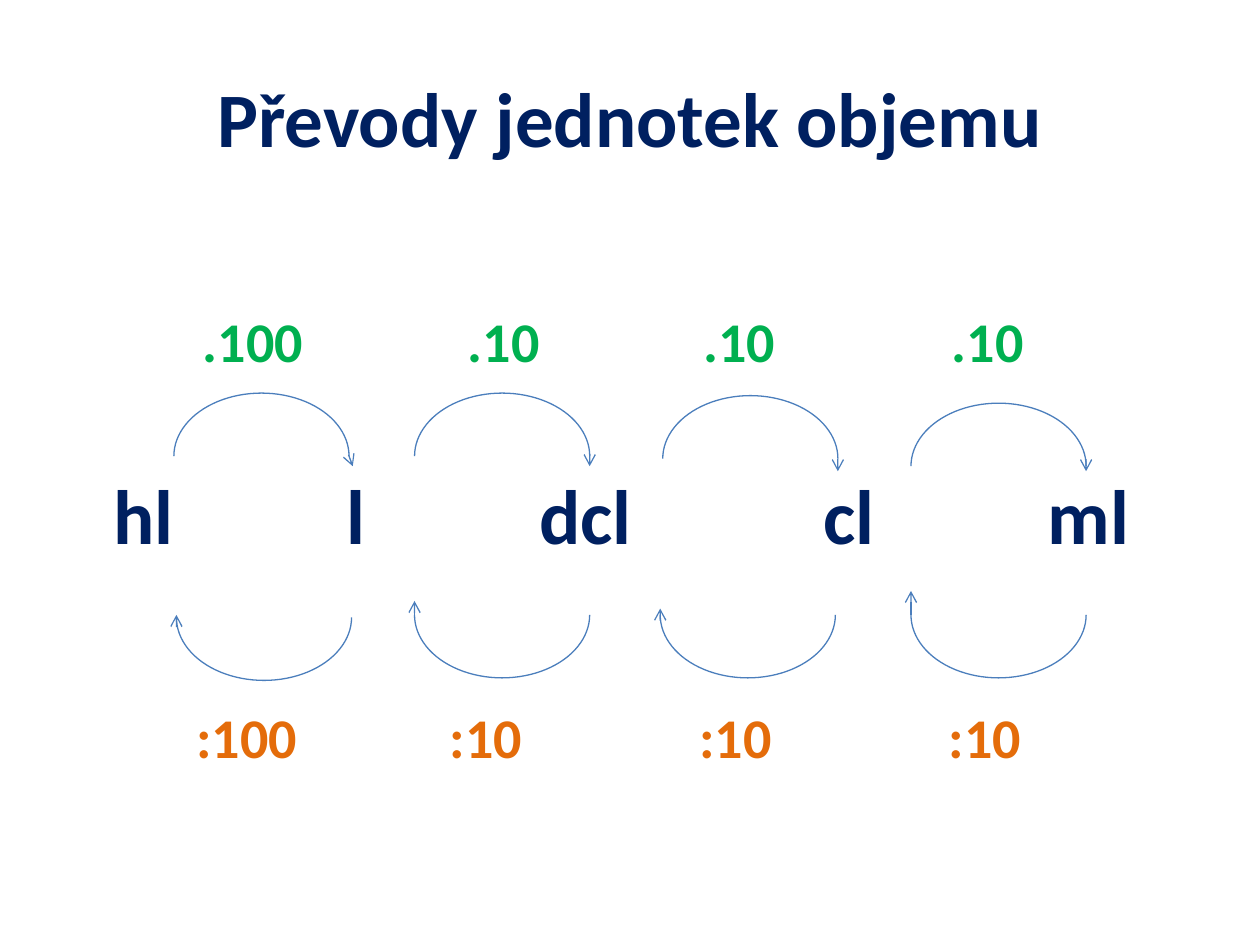
from dataclasses import dataclass

from lxml.etree import SubElement
from pptx import Presentation
from pptx.dml.color import RGBColor as RGB
from pptx.enum.shapes import MSO_CONNECTOR as CONNECTOR, MSO_SHAPE as SHAPE
from pptx.enum.text import MSO_ANCHOR as ANCHOR, PP_ALIGN as ALIGN
from pptx.oxml.ns import qn
from pptx.util import Inches, Pt


@dataclass(frozen=True)
class Theme:
    font: str = "Calibri"
    navy: RGB = RGB(0x00, 0x20, 0x60)
    green: RGB = RGB(0x00, 0xB0, 0x50)
    orange: RGB = RGB(0xE4, 0x6C, 0x0A)
    blue: RGB = RGB(0x4B, 0x7E, 0xBC)
    large: Pt = Pt(44)
    medium: Pt = Pt(32)
    stroke: Pt = Pt(0.75)


THEME = Theme()
ARC_WIDTH, ARC_HEIGHT = 1.39, 1.0

# Each row: entries, their centres from the text edge, colour, size, points above
ROWS = [
    ([".100", ".10", ".10", ".10"], [1.41, 3.40, 5.27, 7.24],
     THEME.green, THEME.medium, 0),
    (["hl", "l", "dcl", "cl", "ml"], [0.54, 2.23, 4.05, 6.14, 8.04],
     THEME.navy, THEME.large, 54),
    ([":100", ":10", ":10", ":10"], [1.36, 3.26, 5.24, 7.22],
     THEME.orange, THEME.medium, 81),
]

# Each arc: left, top, then the arrow's run across and down from the arc's end
MULTIPLY_ARCS = [(1.38, 3.12, 0.03, 0.08), (3.29, 3.12, 0, 0.08),
                 (5.26, 3.14, 0, 0.10), (7.23, 3.20, 0, 0.04)]
DIVIDE_ARCS = [(1.40, 4.40, 0, -0.02), (3.29, 4.38, 0, -0.11),
               (5.24, 4.38, 0, -0.05), (7.23, 4.38, 0, -0.19)]


def style_runs(paragraph, color, size):
    for run in paragraph.runs:
        font = run.font
        font.name, font.size, font.bold = THEME.font, size, True
        font.color.rgb = color


def set_tabs(paragraph, centres):
    """Add centred tab stops."""
    stops = SubElement(paragraph._p.get_or_add_pPr(), qn("a:tabLst"))
    for centre in centres:
        SubElement(stops, qn("a:tab"), pos=str(Inches(centre)), algn="ctr")


def add_title(title, box):
    title.left, title.top, title.width, title.height = map(Inches, box)
    frame = title.text_frame
    frame.text = "Převody jednotek objemu"
    frame.vertical_anchor = ANCHOR.MIDDLE
    frame.paragraphs[0].alignment = ALIGN.CENTER
    style_runs(frame.paragraphs[0], THEME.navy, THEME.large)


def add_unit_rows(slide, box):
    """Units between their factors, aligned in columns by tab stops."""
    frame = slide.shapes.add_textbox(*map(Inches, box)).text_frame
    frame.word_wrap = True
    frame.margin_top = Inches(0.68)
    frame.text = "\n".join("".join("\t" + entry for entry in row[0]) for row in ROWS)
    for paragraph, (_, centres, color, size, above) in zip(frame.paragraphs, ROWS):
        paragraph.space_before = Pt(above)
        set_tabs(paragraph, centres)
        style_runs(paragraph, color, size)


def add_arc_arrow(slide, box, run_across, run_down, rotation):
    """Half an ellipse whose end carries a short arrow."""
    left, top, width, height = box
    arc = slide.shapes.add_shape(SHAPE.ARC, *map(Inches, box))
    arc.adjustments[0], arc.adjustments[1] = 108, 0  # 180 degrees to 0
    arc.rotation = rotation
    arc.shadow.inherit = False
    arc.fill.background()

    end_x = left if rotation else left + width
    end_y = top + height / 2
    arrow = slide.shapes.add_connector(
        CONNECTOR.STRAIGHT, Inches(end_x), Inches(end_y),
        Inches(end_x + run_across), Inches(end_y + run_down))
    SubElement(arrow._element.spPr, qn("a:effectLst"))
    for part in (arc, arrow):
        part.line.color.rgb = THEME.blue
        part.line.width = THEME.stroke
    SubElement(arrow.line._get_or_add_ln(), qn("a:tailEnd"), type="arrow")


def main():
    deck = Presentation()
    deck.slide_width, deck.slide_height = Inches(10), Inches(7.5)
    slide = deck.slides.add_slide(deck.slide_layouts[5])

    add_title(slide.shapes.title, (0.5, 0.3, 9, 1.25))
    add_unit_rows(slide, (0.5, 1.75, 9, 4.95))

    # Multiplying runs to the right above the units, dividing back below them
    for arcs, rotation in ((MULTIPLY_ARCS, 0), (DIVIDE_ARCS, 180)):
        for left, top, run_across, run_down in arcs:
            add_arc_arrow(slide, (left, top, ARC_WIDTH, ARC_HEIGHT),
                          run_across, run_down, rotation)

    deck.save("out.pptx")


if __name__ == "__main__":
    main()
